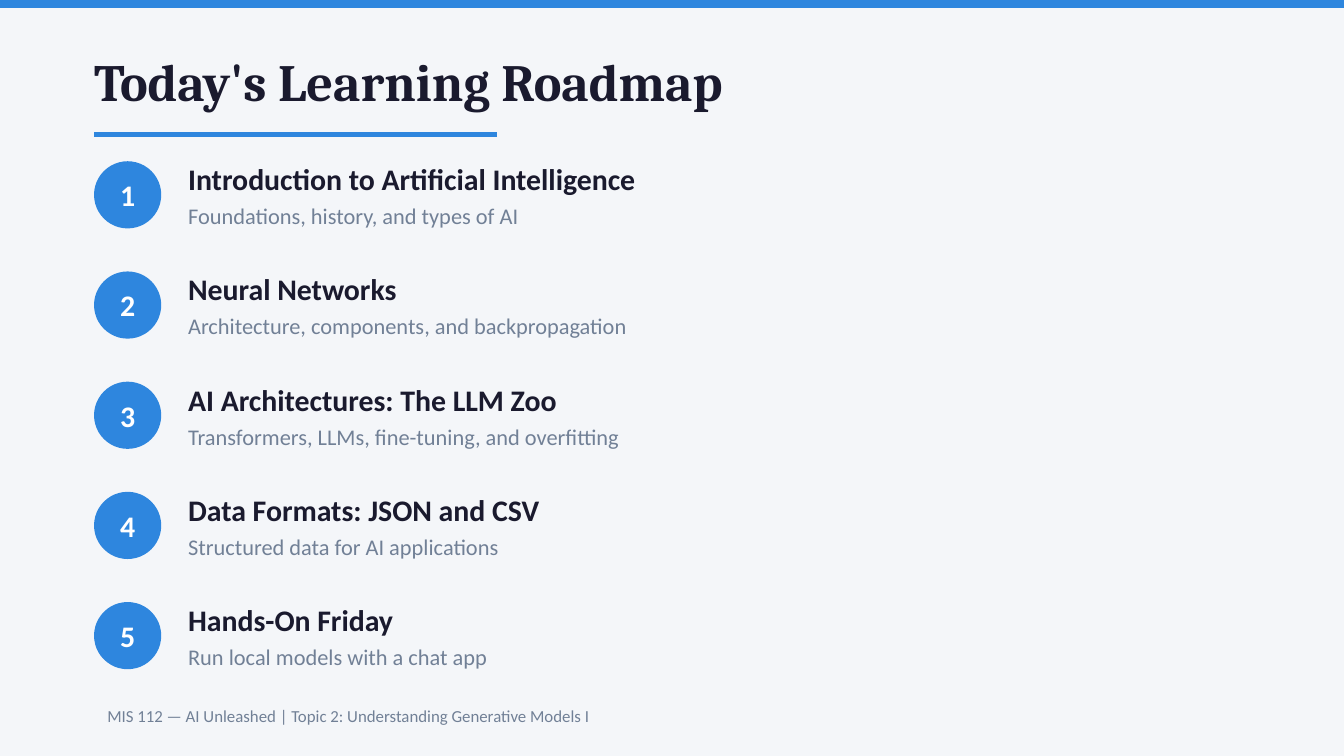
"""Build the learning roadmap slide with five numbered topics."""
from dataclasses import dataclass

from lxml import etree
from pptx import Presentation
from pptx.dml.color import RGBColor
from pptx.enum.shapes import MSO_CONNECTOR, MSO_SHAPE
from pptx.enum.text import MSO_ANCHOR, PP_ALIGN
from pptx.oxml.ns import qn
from pptx.util import Pt

STRAIGHT = MSO_CONNECTOR.STRAIGHT
RECTANGLE = MSO_SHAPE.RECTANGLE
OVAL = MSO_SHAPE.OVAL
MIDDLE = MSO_ANCHOR.MIDDLE
LEFT = PP_ALIGN.LEFT
CENTER = PP_ALIGN.CENTER

COLORS = {
    "background": "F4F6F9",
    "accent": "2E86DE",
    "ink": "1A1A2E",
    "muted": "718096",
    "white": "FFFFFF",
}
SLIDE_WIDTH, SLIDE_HEIGHT = 720, 405
MARGIN = 50.4
CONTENT_WIDTH = SLIDE_WIDTH - 2 * MARGIN
BADGE_SIZE = 36
TOPIC_LEFT, TOPIC_WIDTH = 100.8, 504
FIRST_TOPIC_TOP, TOPIC_PITCH = 84.96, 59.04
BADGE_DROP = 1.44
HEADING_HEIGHT, SUMMARY_HEIGHT = 21.6, 18


@dataclass(frozen=True)
class Box:
    left: float
    top: float
    width: float
    height: float


@dataclass(frozen=True)
class Style:
    size: float
    color: str
    bold: bool = False
    font: str = "Calibri"


@dataclass(frozen=True)
class Topic:
    heading: str
    summary: str


TITLE = Style(28, "ink", True, "Cambria")
NUMBER = Style(16, "white", True)
HEADING = Style(16, "ink", True)
SUMMARY = Style(12, "muted")
FOOTER = Style(9, "muted")

TOPICS = [
    Topic("Introduction to Artificial Intelligence", "Foundations, history, and types of AI"),
    Topic("Neural Networks", "Architecture, components, and backpropagation"),
    Topic("AI Architectures: The LLM Zoo", "Transformers, LLMs, fine-tuning, and overfitting"),
    Topic("Data Formats: JSON and CSV", "Structured data for AI applications"),
    Topic("Hands-On Friday", "Run local models with a chat app"),
]


def rgb(name: str) -> RGBColor:
    return RGBColor.from_string(COLORS[name])


def place(box: Box) -> tuple:
    return Pt(box.left), Pt(box.top), Pt(box.width), Pt(box.height)


def write(frame, text: str, style: Style, align=LEFT, inset: float = 0) -> None:
    frame.word_wrap = True
    frame.vertical_anchor = MIDDLE
    frame.margin_left = frame.margin_right = Pt(inset)
    frame.margin_top = frame.margin_bottom = Pt(0)
    paragraph = frame.paragraphs[0]
    paragraph.text = text
    paragraph.alignment = align
    font = paragraph.font
    font.name, font.size, font.bold = style.font, Pt(style.size), style.bold
    font.color.rgb = rgb(style.color)


def add_text(slide, box: Box, text: str, style: Style, inset: float = 0) -> None:
    write(slide.shapes.add_textbox(*place(box)).text_frame, text, style, inset=inset)


def add_accent(slide, preset, box: Box):
    accent = slide.shapes.add_shape(preset, *place(box))
    accent.shadow.inherit = False
    accent.fill.solid()
    accent.fill.fore_color.rgb = rgb("accent")
    accent.line.fill.background()
    return accent


def add_rule(slide, left: float, top: float, length: float) -> None:
    rule = slide.shapes.add_connector(STRAIGHT, Pt(left), Pt(top), Pt(left + length), Pt(top))
    rule.line.color.rgb = rgb("accent")
    rule.line.width = Pt(2.5)
    etree.SubElement(rule._element.spPr, qn("a:effectLst"))


def add_topic(slide, index: int, topic: Topic) -> None:
    top = FIRST_TOPIC_TOP + index * TOPIC_PITCH
    badge = add_accent(slide, OVAL, Box(MARGIN, top + BADGE_DROP, BADGE_SIZE, BADGE_SIZE))
    write(badge.text_frame, str(index + 1), NUMBER, CENTER)
    add_text(slide, Box(TOPIC_LEFT, top, TOPIC_WIDTH, HEADING_HEIGHT), topic.heading, HEADING)
    summary_box = Box(TOPIC_LEFT, top + HEADING_HEIGHT, TOPIC_WIDTH, SUMMARY_HEIGHT)
    add_text(slide, summary_box, topic.summary, SUMMARY)


def main() -> None:
    deck = Presentation()
    deck.slide_width, deck.slide_height = Pt(SLIDE_WIDTH), Pt(SLIDE_HEIGHT)
    slide = deck.slides.add_slide(deck.slide_layouts[6])
    slide.background.fill.solid()
    slide.background.fill.fore_color.rgb = rgb("background")

    add_accent(slide, RECTANGLE, Box(0, 0, SLIDE_WIDTH, 4.32))
    add_text(slide, Box(MARGIN, 18, CONTENT_WIDTH, 50.4), "Today's Learning Roadmap", TITLE)
    add_rule(slide, MARGIN, 72, 216)
    for index, topic in enumerate(TOPICS):
        add_topic(slide, index, topic)
    footer = "MIS 112 — AI Unleashed | Topic 2: Understanding Generative Models I"
    add_text(slide, Box(MARGIN, 370.8, CONTENT_WIDTH, 25.2), footer, FOOTER, inset=7.2)
    deck.save("out.pptx")


if __name__ == "__main__":
    main()
